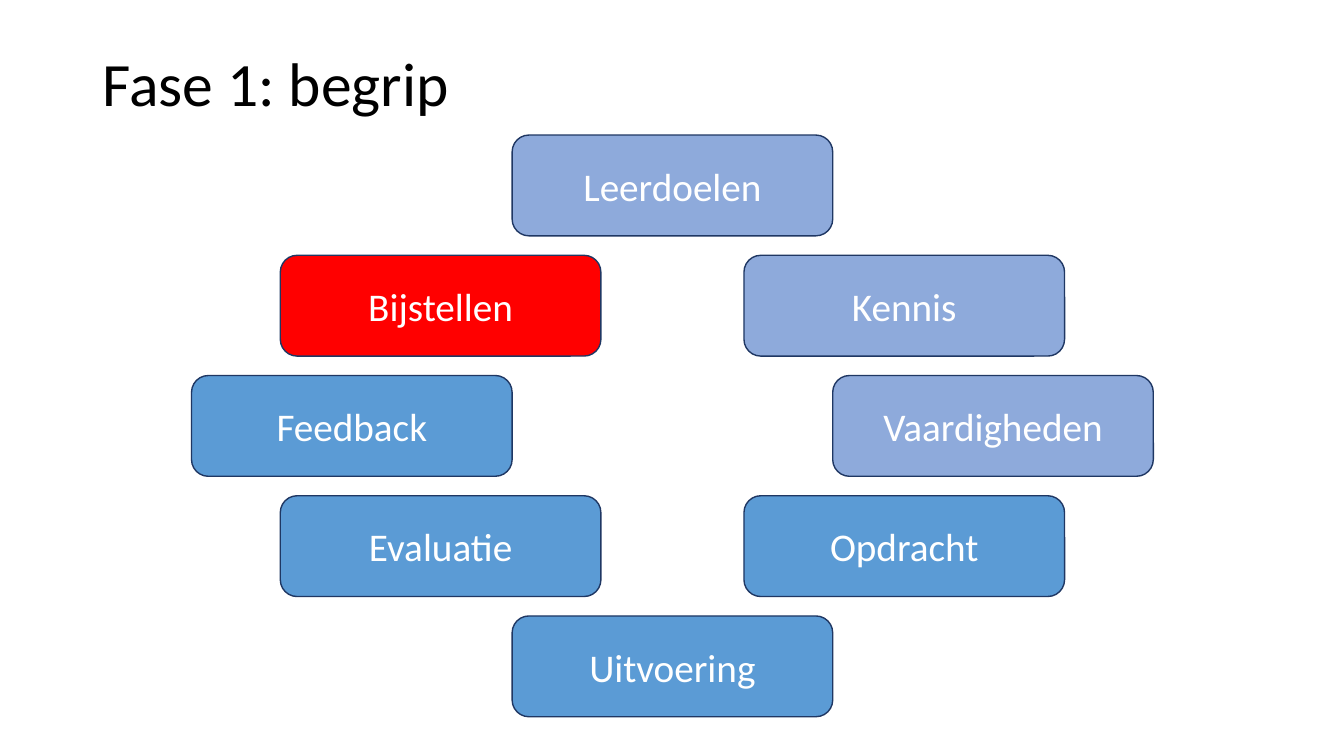
from pptx import Presentation
from pptx.dml.color import RGBColor
from pptx.enum.shapes import MSO_SHAPE
from pptx.enum.text import MSO_ANCHOR, PP_ALIGN
from pptx.util import Pt

ROUNDED = MSO_SHAPE.ROUNDED_RECTANGLE
MIDDLE = MSO_ANCHOR.MIDDLE
LEFT, CENTER = PP_ALIGN.LEFT, PP_ALIGN.CENTER

FONT = "Calibri"
BLACK, WHITE, NAVY = "000000", "FFFFFF", "1F3763"
PERIWINKLE, BLUE, RED = "8EAADB", "5B9BD5", "FF0000"

STEP_W, STEP_H = 229, 72
SHOULDER = 165.6
STEPS = [
    ("Leerdoelen", PERIWINKLE, 0, 0),
    ("Kennis", PERIWINKLE, SHOULDER, 1),
    ("Vaardigheden", PERIWINKLE, STEP_W, 2),
    ("Opdracht", BLUE, SHOULDER, 3),
    ("Uitvoering", BLUE, 0, 4),
    ("Evaluatie", BLUE, -SHOULDER, 3),
    ("Feedback", BLUE, -STEP_W, 2),
    ("Bijstellen", RED, -SHOULDER, 1),
]


def rgb(value):
    """Return the colour for a hex string."""
    return RGBColor.from_string(value)


def place(sp, x, y, w, h):
    """Set the position and size of a shape in points."""
    sp.left, sp.top, sp.width, sp.height = Pt(x), Pt(y), Pt(w), Pt(h)


def write(sp, text, size, color, align=LEFT, spacing=1.0):
    """Write one formatted paragraph into a shape."""
    tf = sp.text_frame
    tf.word_wrap = True
    tf.vertical_anchor = MIDDLE
    p = tf.paragraphs[0]
    p.alignment = align
    p.line_spacing = spacing
    r = p.add_run()
    r.text = text
    r.font.name = FONT
    r.font.size = Pt(size)
    r.font.color.rgb = rgb(color)


def add_title(s, text, x, y, w, h):
    """Fill the title placeholder within the given box."""
    sp = s.shapes.title
    place(sp, x, y, w, h)
    write(sp, text, 44, BLACK, spacing=0.9)


def add_step(s, text, fill, x, y, w, h):
    """Draw one rounded step of the cycle."""
    sp = s.shapes.add_shape(ROUNDED, Pt(x), Pt(y), Pt(w), Pt(h))
    sp.shadow.inherit = False
    sp.fill.solid()
    sp.fill.fore_color.rgb = rgb(fill)
    sp.line.color.rgb = rgb(NAVY)
    sp.line.width = Pt(1)
    write(sp, text, 28, WHITE, align=CENTER)


def add_cycle(s, x, y, w, h):
    """Arrange the steps around the centre of the given box."""
    middle = x + (w - STEP_W) / 2
    pitch = (h - STEP_H) / 4
    for text, fill, offset, row in STEPS:
        add_step(s, text, fill, middle + offset, y + row * pitch, STEP_W, STEP_H)


def main():
    """Build and save the slide."""
    prs = Presentation()
    prs.slide_width, prs.slide_height = Pt(960), Pt(540)
    s = prs.slides.add_slide(prs.slide_layouts[5])
    add_title(s, "Fase 1: begrip", 66, 9.5, 828, 104.5)
    add_cycle(s, 136.8, 96.5, 3 * STEP_W, 415.5)
    prs.save("out.pptx")


if __name__ == "__main__":
    main()
